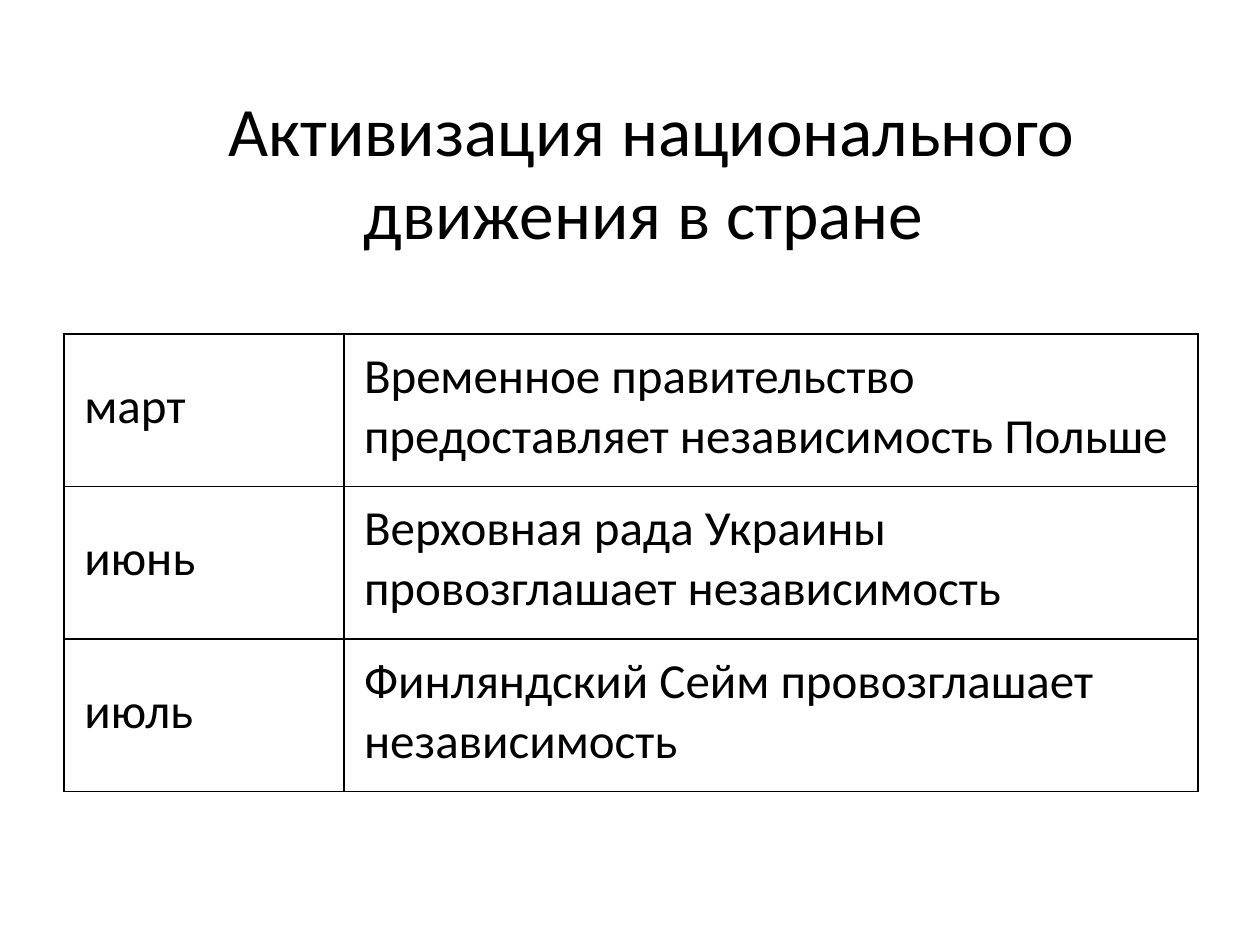
from lxml.etree import SubElement
from pptx import Presentation
from pptx.dml.color import RGBColor
from pptx.enum.text import MSO_ANCHOR, MSO_AUTO_SIZE, PP_ALIGN
from pptx.oxml.ns import qn
from pptx.util import Inches, Pt

INK = "000000"
EVENTS = [
    ("март", "Временное правительство предоставляет независимость Польше"),
    ("июнь", "Верховная рада Украины провозглашает независимость"),
    ("июль", "Финляндский Сейм провозглашает независимость"),
]


def color(code):
    return RGBColor.from_string(code)


def write(para, text, size, align):
    para.text = text
    para.alignment = align
    para.font.name = "Calibri"
    para.font.size = Pt(size)
    para.font.color.rgb = color(INK)


def border(cell, code, width):
    props = cell._tc.get_or_add_tcPr()
    for at, side in enumerate(("lnL", "lnR", "lnT", "lnB")):
        line = SubElement(props, qn(f"a:{side}"), w=str(Pt(width)))
        fill = SubElement(line, qn("a:solidFill"))
        SubElement(fill, qn("a:srgbClr"), val=code)
        props.insert(at, line)  # borders come before the cell fill


def add_title(slide, left, top, width, height):
    title = slide.shapes.title
    title.left, title.top = Inches(left), Inches(top)
    title.width, title.height = Inches(width), Inches(height)
    frame = title.text_frame
    frame.word_wrap = True
    frame.auto_size = MSO_AUTO_SIZE.NONE
    frame.vertical_anchor = MSO_ANCHOR.MIDDLE
    write(frame.paragraphs[0], "Активизация национального\vдвижения в стране ",
          39.6, PP_ALIGN.CENTER)


def add_events(slide, left, top, width, height):
    table = slide.shapes.add_table(
        len(EVENTS), 2, Inches(left), Inches(top),
        Inches(width), Inches(height)).table
    table.first_row = table.horz_banding = False
    month = 2.22
    table.columns[0].width = Inches(month)
    table.columns[1].width = Inches(width - month)
    for row, texts in enumerate(EVENTS):
        for col, text in enumerate(texts):
            cell = table.cell(row, col)
            cell.fill.background()
            cell.vertical_anchor = MSO_ANCHOR.MIDDLE
            cell.margin_left = cell.margin_right = Inches(0.16)
            cell.margin_top, cell.margin_bottom = Inches(0.1), Inches(0.16)
            write(cell.text_frame.paragraphs[0], text, 28, PP_ALIGN.LEFT)
            border(cell, INK, 1)


def main():
    deck = Presentation()
    deck.slide_width, deck.slide_height = Inches(10), Inches(7.5)
    slide = deck.slides.add_slide(deck.slide_layouts[5])  # title only

    # Heading
    add_title(slide, 0.67, 0.6, 9, 1.5)
    # Months and events
    add_events(slide, 0.51, 2.65, 9, 3.58)

    deck.save("out.pptx")


if __name__ == "__main__":
    main()
